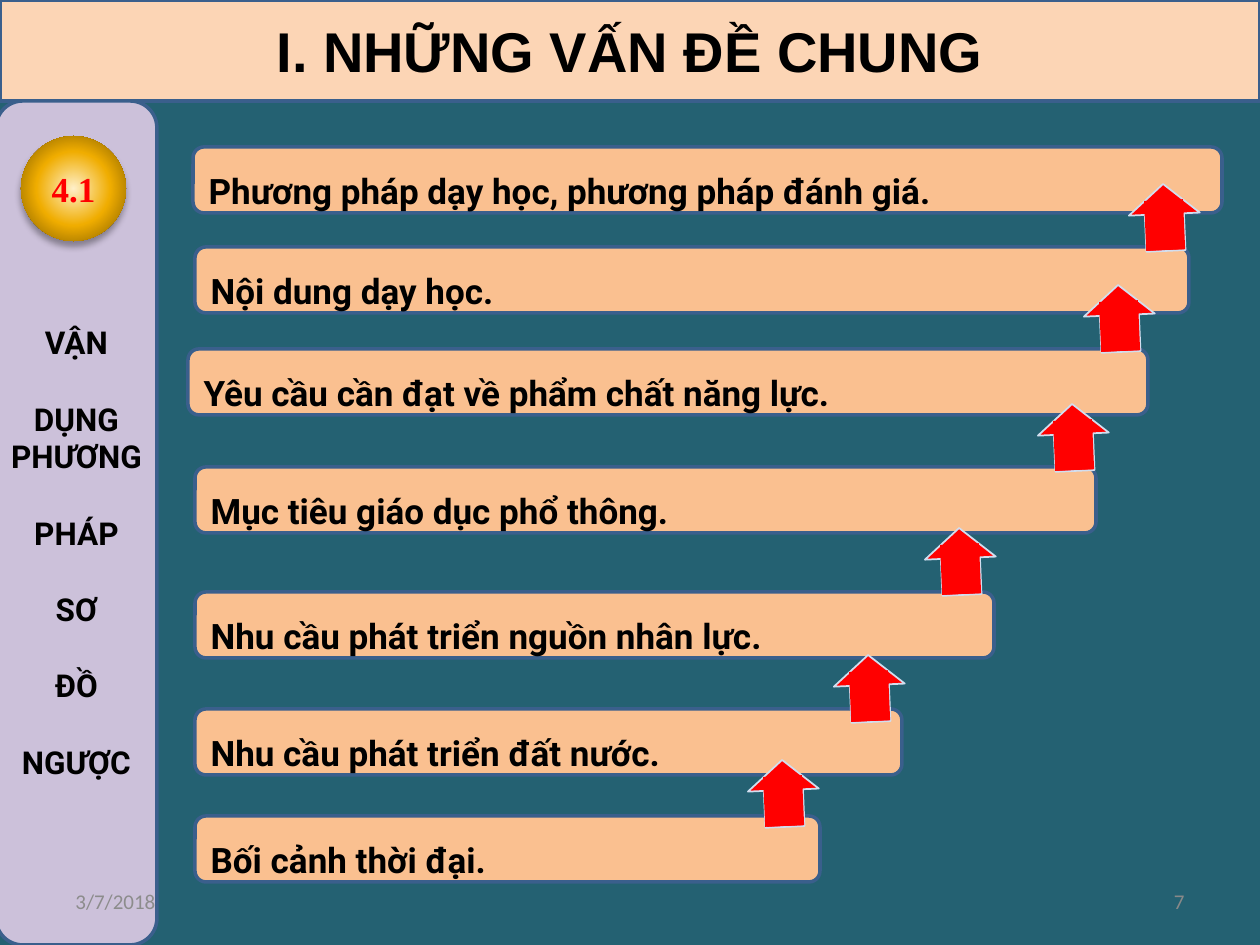
from pptx import Presentation
from pptx.dml.color import RGBColor
from pptx.enum.shapes import MSO_SHAPE as Shape
from pptx.enum.text import MSO_ANCHOR as Anchor, MSO_AUTO_SIZE as AutoSize, PP_ALIGN as Align
from pptx.oxml import parse_xml
from pptx.oxml.ns import nsdecls
from pptx.util import Emu, Pt

PX = 914400 / 126
BORDER = "3A5F8C"
ROW_HEIGHT = 66
ARROW_ANGLE = 177.5

# text, left, top, width
ROWS = [
    ("Bối cảnh thời đại.", 195, 816, 625),
    ("Nhu cầu phát triển đất nước.", 195, 709, 707),
    ("Nhu cầu phát triển nguồn nhân lực.", 195, 592, 799),
    ("Mục tiêu giáo dục phổ thông.", 195, 467, 901),
    ("Yêu cầu cần đạt về phẩm chất năng lực.", 188, 349, 960),
    ("Nội dung dạy học.", 195, 247, 994),
    ("Phương pháp dạy học, phương pháp đánh giá.", 193, 147, 1029),
]
ARROWS = [(748, 760), (834, 655), (925, 528), (1038, 404), (1084, 285), (1129, 184)]
SIDEBAR_WORDS = ["VẬN", "DỤNG", "PHƯƠNG", "PHÁP", "SƠ", "ĐỒ", "NGƯỢC"]


def px(length):
    return Emu(round(length * PX))


def color(value):
    return RGBColor.from_string(value)


def apply(target, values):
    for name, value in values.items():
        setattr(target, name, value)


def font(name, size, bold=True):
    return {"name": name, "size": Pt(size), "bold": bold}


class Deck:
    def __init__(self, background):
        self.prs = Presentation()
        self.prs.slide_width, self.prs.slide_height = px(1260), px(945)
        self.slide = self.prs.slides.add_slide(self.prs.slide_layouts[5])
        self.slide.background.fill.solid()
        self.slide.background.fill.fore_color.rgb = color(background)

    def paint(self, shape, fill, line=None, width=2):
        shape.fill.solid()
        shape.fill.fore_color.rgb = color(fill)
        if line:
            shape.line.color.rgb = color(line)
            shape.line.width = Pt(width)
        else:
            shape.line.fill.background()

    def set_text(self, shape, lines, style, ink="000000", frame=None, **paragraph_style):
        text = shape.text_frame
        apply(text, {"word_wrap": True, "auto_size": AutoSize.NONE,
                     "vertical_anchor": Anchor.MIDDLE, **(frame or {})})
        text.text = "\n".join(lines)
        for paragraph in text.paragraphs:
            apply(paragraph, {"alignment": Align.LEFT, **paragraph_style})
            apply(paragraph.font, style)
            paragraph.font.color.rgb = color(ink)

    def title(self, text, box, fill, style):
        heading = self.slide.shapes.title
        apply(heading, dict(zip(("left", "top", "width", "height"), map(px, box))))
        self.paint(heading, fill, BORDER)
        self.set_text(heading, [text], style, alignment=Align.CENTER)

    def shape(self, kind, box, fill, line=None, width=2, parent=None):
        shape = (parent or self.slide).shapes.add_shape(kind, *map(px, box))
        shape.shadow.inherit = False
        self.paint(shape, fill, line, width)
        return shape

    def label(self, text, box, ink, alignment):
        textbox = self.slide.shapes.add_textbox(*map(px, box))
        self.set_text(textbox, [text], font("Calibri", 12, False), ink, alignment=alignment)

    def arrow(self, left, top):
        group = self.slide.shapes.add_group_shape()
        head = self.shape(Shape.DOWN_ARROW, (left, top, 71, 67), "FF0000", "D2DEEF", 1, group)
        head.adjustments[0], head.adjustments[1] = 0.55, 0.45
        shaft = self.shape(Shape.RECTANGLE, (left + 16, top + 16, 39, 50), "FF0000", parent=group)
        head.rotation = shaft.rotation = ARROW_ANGLE

    def badge(self, text, box, stops):
        """Draw a circle with a radial gradient and a soft shadow below it."""
        ball = self.shape(Shape.OVAL, box, stops[0][1])
        stop_xml = "".join(f'<a:gs pos="{at * 1000}"><a:srgbClr val="{value}"/></a:gs>'
                           for at, value in stops)
        gradient = parse_xml(
            f'<a:gradFill {nsdecls("a")} rotWithShape="1"><a:gsLst>{stop_xml}</a:gsLst>'
            '<a:path path="circle"><a:fillToRect l="50000" t="50000" r="50000" b="50000"/>'
            '</a:path></a:gradFill>')
        shadow = parse_xml(
            f'<a:outerShdw {nsdecls("a")} blurRad="{Pt(4)}" dist="{Pt(3)}" dir="5400000" '
            'rotWithShape="0"><a:srgbClr val="000000"><a:alpha val="35000"/></a:srgbClr>'
            '</a:outerShdw>')
        properties = ball._element.spPr
        properties.replace(properties.find("{*}solidFill"), gradient)
        properties.find("{*}effectLst").append(shadow)
        self.set_text(ball, [text], font("Times New Roman", 20), "FF0000",
                      alignment=Align.CENTER)


def main():
    deck = Deck("246172")
    deck.title("I. NHỮNG VẤN ĐỀ CHUNG", (0, 0, 1260, 101), "FCD5B5", font("Arial", 32))

    sidebar = deck.shape(Shape.ROUNDED_RECTANGLE, (-4, 101, 161, 844), "CCC1DA", BORDER)
    deck.set_text(sidebar, SIDEBAR_WORDS, font("Roboto", 18), alignment=Align.CENTER,
                  frame={"margin_left": 0, "margin_right": 0, "margin_top": px(64)})
    for word, paragraph in zip(SIDEBAR_WORDS[1:], sidebar.text_frame.paragraphs[1:]):
        paragraph.space_before = Pt(0 if word == "PHƯƠNG" else 22)

    for text, left, top, width in ROWS:
        row = deck.shape(Shape.ROUNDED_RECTANGLE, (left, top, width, ROW_HEIGHT),
                         "FAC090", BORDER)
        deck.set_text(row, [text], font("Roboto", 20), line_spacing=1.5)
    for left, top in ARROWS:
        deck.arrow(left, top)

    deck.badge("4.1", (21, 136, 105, 105), [(0, "FFF0C9"), (50, "F0AD00"), (100, "785600")])
    deck.label("3/7/2018", (63, 876, 294, 50), "8C8C8C", Align.LEFT)
    deck.label("7", (903, 876, 294, 50), "898989", Align.RIGHT)
    deck.prs.save("out.pptx")


if __name__ == "__main__":
    main()
